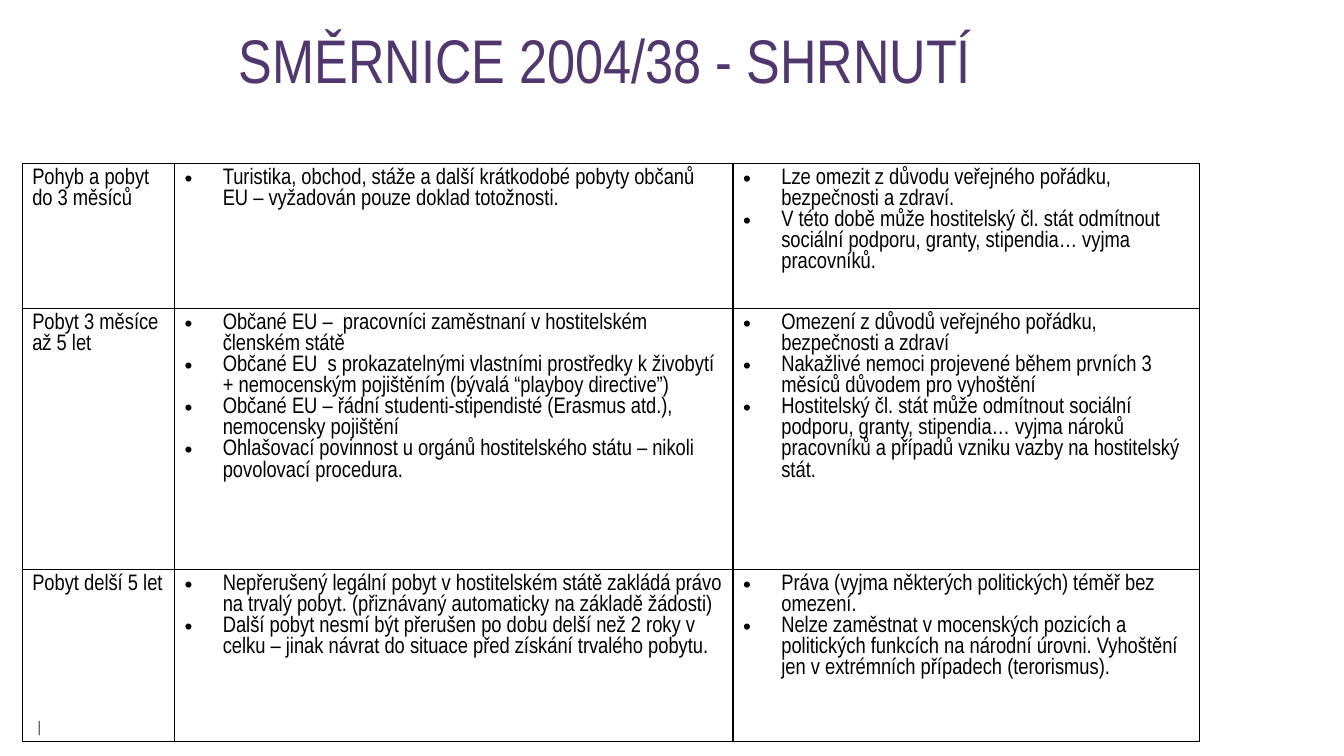
from lxml.etree import SubElement
from pptx import Presentation
from pptx.dml.color import RGBColor
from pptx.enum.text import MSO_ANCHOR, MSO_AUTO_SIZE, PP_ALIGN
from pptx.oxml.ns import qn
from pptx.util import Inches, Pt

HEADING = "SMĚRNICE 2004/38 - SHRNUTÍ"
FOOTER_MARK = "|"
STAYS = [
    ("Pohyb a pobyt do 3 měsíců",
     ["Turistika, obchod, stáže a další krátkodobé pobyty občanů EU – vyžadován pouze doklad totožnosti."],
     ["Lze omezit z důvodu veřejného pořádku, bezpečnosti a zdraví.",
      "V této době může hostitelský čl. stát odmítnout sociální podporu, granty, stipendia… vyjma pracovníků."]),
    ("Pobyt 3 měsíce až 5 let",
     ["Občané EU –  pracovníci zaměstnaní v hostitelském členském státě",
      "Občané EU  s prokazatelnými vlastními prostředky k živobytí + nemocenským pojištěním (bývalá “playboy directive”)",
      "Občané EU – řádní studenti-stipendisté (Erasmus atd.), nemocensky pojištění",
      "Ohlašovací povinnost u orgánů hostitelského státu – nikoli povolovací procedura."],
     ["Omezení z důvodů veřejného pořádku, bezpečnosti a zdraví",
      "Nakažlivé nemoci projevené během prvních 3 měsíců důvodem pro vyhoštění",
      "Hostitelský čl. stát může odmítnout sociální podporu, granty, stipendia… vyjma nároků pracovníků a případů vzniku vazby na hostitelský stát."]),
    ("Pobyt delší 5 let",
     ["Nepřerušený legální pobyt v hostitelském státě zakládá právo na trvalý pobyt. (přiznávaný automaticky na základě žádosti)",
      "Další pobyt nesmí být přerušen po dobu delší než 2 roky v celku – jinak návrat do situace před získání trvalého pobytu."],
     ["Práva (vyjma některých politických) téměř bez omezení.",
      "Nelze zaměstnat v mocenských pozicích a politických funkcích na národní úrovni. Vyhoštění jen v extrémních případech (terorismus)."]),
]
COLUMNS = [1.51, 5.54, 4.63]
ROWS = [1.44, 2.59, 1.71]
INDENT = Inches(0.38)


def color(value):
    return RGBColor.from_string(value)


def write(frame, lines, size=16, font="Arial Narrow", ink="000000",
          bullet=None, align=None, spacing=None):
    for index, line in enumerate(lines):
        paragraph = frame.paragraphs[0] if index == 0 else frame.add_paragraph()
        if bullet:
            properties = paragraph._p.get_or_add_pPr()
            properties.set("marL", str(INDENT))
            properties.set("indent", str(-INDENT))
            SubElement(properties, qn("a:buFont"), typeface="Arial")
            SubElement(properties, qn("a:buChar"), char=bullet)
        if align is not None:
            paragraph.alignment = align
        if spacing:
            paragraph.line_spacing = spacing
        run = paragraph.add_run()
        run.text = line
        run.font.size = Pt(size)
        run.font.name = font
        run.font.color.rgb = color(ink)


def clear_margins(frame):
    frame.margin_left = frame.margin_right = 0
    frame.margin_top = frame.margin_bottom = 0


def outline(cell, ink="000000", width=1):
    properties = cell._tc.get_or_add_tcPr()
    for side in ("lnL", "lnR", "lnT", "lnB"):
        edge = SubElement(properties, qn("a:" + side), w=str(Pt(width)))
        fill = SubElement(edge, qn("a:solidFill"))
        SubElement(fill, qn("a:srgbClr"), val=ink)


def main():
    deck = Presentation()
    deck.slide_width, deck.slide_height = Inches(13.33), Inches(7.5)
    slide = deck.slides.add_slide(deck.slide_layouts[5])

    heading = slide.shapes.title
    heading.left, heading.top = Inches(0.62), Inches(0.3)
    heading.width, heading.height = Inches(10.77), Inches(1.25)
    clear_margins(heading.text_frame)
    heading.text_frame.auto_size = MSO_AUTO_SIZE.NONE
    heading.text_frame.vertical_anchor = MSO_ANCHOR.TOP
    write(heading.text_frame, [HEADING], size=44, ink="50386F",
          align=PP_ALIGN.CENTER, spacing=0.9)

    mark = slide.shapes.add_textbox(Inches(0.37), Inches(7.11), Inches(0.04), Inches(0.19))
    clear_margins(mark.text_frame)
    mark.text_frame.word_wrap = False
    write(mark.text_frame, [FOOTER_MARK], size=11, font="Arial", ink="575756")

    overview = slide.shapes.add_table(
        len(ROWS), len(COLUMNS), Inches(0.22), Inches(1.62),
        Inches(sum(COLUMNS)), Inches(sum(ROWS))).table
    overview.first_row = overview.horz_banding = False
    for column, width in zip(overview.columns, COLUMNS):
        column.width = Inches(width)
    for row, height, stay in zip(overview.rows, ROWS, STAYS):
        row.height = Inches(height)
        for cell, content in zip(row.cells, stay):
            outline(cell)
            cell.fill.background()
            if isinstance(content, str):
                write(cell.text_frame, [content])
            else:
                write(cell.text_frame, content, bullet="•")

    deck.save("out.pptx")


if __name__ == "__main__":
    main()
